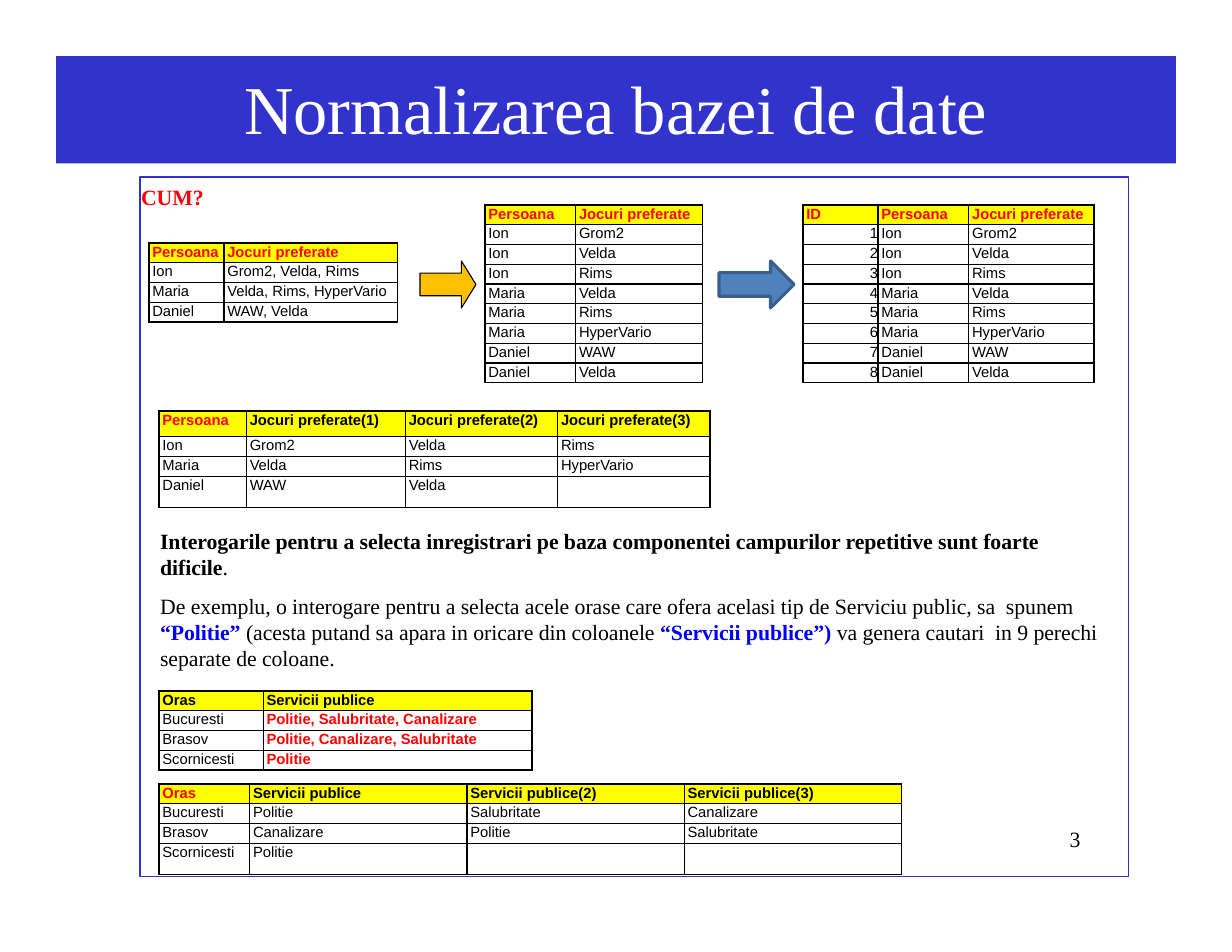
from dataclasses import dataclass

from lxml.etree import SubElement
from pptx import Presentation
from pptx.dml.color import RGBColor
from pptx.enum.shapes import MSO_SHAPE
from pptx.enum.text import MSO_ANCHOR, MSO_AUTO_SIZE, PP_ALIGN
from pptx.oxml.ns import qn
from pptx.util import Inches, Pt


@dataclass(frozen=True)
class Theme:
    """Colours, fonts and type sizes of the deck."""

    banner: str = "3232CC"
    white: str = "FFFFFF"
    black: str = "000000"
    red: str = "FF0000"
    blue: str = "0000FF"
    yellow: str = "FFFF00"
    amber: str = "FFC000"
    steel: str = "4F81BD"
    steel_edge: str = "3A5F8C"
    serif: str = "Times New Roman"
    sans: str = "Arial"
    title: float = 44
    body: float = 14
    cell: float = 9.5


THEME = Theme()
ROW_HEIGHT = Inches(1.59) // 9
FAVOURITES = {
    "Ion": ["Grom2", "Velda", "Rims"],
    "Maria": ["Velda", "Rims", "HyperVario"],
    "Daniel": ["WAW", "Velda"],
}
PAIRS = [[person, game] for person, games in FAVOURITES.items() for game in games]
SERVICES = {
    "Bucuresti": ["Politie", "Salubritate", "Canalizare"],
    "Brasov": ["Politie", "Canalizare", "Salubritate"],
    "Scornicesti": ["Politie"],
}
SERVICE_COLUMNS = {**SERVICES, "Brasov": ["Canalizare", "Politie", "Salubritate"]}


def apply(target, formats):
    """Set each attribute named in a dict of format values."""
    for name, value in formats.items():
        setattr(target, name, value)


def place(box, left, top, width, height):
    """Move and size a shape, in inches."""
    apply(box, {"left": Inches(left), "top": Inches(top),
                "width": Inches(width), "height": Inches(height)})


def add_span(para, text, size, font, color=THEME.black, bold=False, spacing=0):
    """Add one formatted run with letter spacing in points."""
    span = para.add_run()
    span.text = text
    apply(span.font, {"size": Pt(size), "name": font, "bold": bold})
    span.font.color.rgb = RGBColor.from_string(color)
    if spacing:
        span._r.get_or_add_rPr().set("spc", str(round(spacing * 100)))


def frame_text(frame, top_margin, left_margin=0.01):
    """Give a text frame top anchoring and tight margins."""
    apply(frame, {"word_wrap": True, "auto_size": MSO_AUTO_SIZE.NONE,
                  "vertical_anchor": MSO_ANCHOR.TOP,
                  "margin_left": Inches(left_margin), "margin_right": 0,
                  "margin_top": Inches(top_margin), "margin_bottom": 0})


def set_title(page, text):
    """Turn the title placeholder into the coloured banner."""
    box = page.shapes.title
    place(box, 0.5, 0.5, 10, 0.96)
    box.fill.solid()
    box.fill.fore_color.rgb = RGBColor.from_string(THEME.banner)
    frame_text(box.text_frame, 0.09, 0)
    para = box.text_frame.paragraphs[0]
    apply(para, {"alignment": PP_ALIGN.CENTER, "space_before": Pt(6.6)})
    add_span(para, text, THEME.title, THEME.serif, THEME.white, spacing=-0.1)


def add_text(page, bounds, top_margin, paragraphs):
    """Add a serif text box from (space before, spans) paragraphs."""
    box = page.shapes.add_textbox(*map(Inches, bounds))
    frame = box.text_frame
    frame_text(frame, top_margin)
    for index, (space, spans) in enumerate(paragraphs):
        para = frame.add_paragraph() if index else frame.paragraphs[0]
        para.space_before = Pt(space)
        for text, color, bold in spans:
            add_span(para, text, THEME.body, THEME.serif, color, bold, -0.06)


def add_outline(page, kind, bounds, fill, line, weight):
    """Add a preset shape with an optional fill and a line."""
    shape = page.shapes.add_shape(kind, *map(Inches, bounds))
    shape.shadow.inherit = False
    if fill:
        shape.fill.solid()
        shape.fill.fore_color.rgb = RGBColor.from_string(fill)
    else:
        shape.fill.background()
    shape.line.color.rgb = RGBColor.from_string(line)
    shape.line.width = Pt(weight)
    return shape


def add_borders(cell):
    """Draw a thin black line on all four sides of a cell."""
    properties = cell._tc.get_or_add_tcPr()
    for side in ("a:lnL", "a:lnR", "a:lnT", "a:lnB"):
        line = SubElement(properties, qn(side), w=str(Pt(1)))
        fill = SubElement(line, qn("a:solidFill"))
        SubElement(fill, qn("a:srgbClr"), val=THEME.black)


def fill_cell(cell, text, color, bold, fill):
    """Write and format one table cell."""
    add_borders(cell)
    if fill:
        cell.fill.solid()
        cell.fill.fore_color.rgb = RGBColor.from_string(fill)
    else:
        cell.fill.background()
    apply(cell, {"margin_left": Inches(0.03), "margin_right": 0,
                 "margin_top": 0, "margin_bottom": 0})
    para = cell.text_frame.paragraphs[0]
    apply(para, {"line_spacing": Pt(11.1),
                 "alignment": PP_ALIGN.RIGHT if text.isdigit() else PP_ALIGN.LEFT})
    add_span(para, text, THEME.cell, THEME.sans, color, bold)


def add_grid(page, left, top, widths, header, rows, red_headers=0, red_columns=(),
             header_height=ROW_HEIGHT):
    """Add a bordered table whose first header cells may be red."""
    heights = [header_height] + [ROW_HEIGHT] * len(rows)
    table = page.shapes.add_table(len(heights), len(widths), Inches(left), Inches(top),
                                  Inches(sum(widths)), sum(heights)).table
    apply(table, {"first_row": False, "horz_banding": False})
    for column, width in zip(table.columns, widths):
        column.width = Inches(width)
    for row, height in zip(table.rows, heights):
        row.height = height
    for index, text in enumerate(header):
        color = THEME.red if index < red_headers else THEME.black
        fill_cell(table.cell(0, index), text, color, True, THEME.yellow)
    for number, values in enumerate(rows, 1):
        for index in range(len(widths)):
            text = values[index] if index < len(values) else ""
            red = index in red_columns
            fill_cell(table.cell(number, index), text,
                      THEME.red if red else THEME.black, red, None)


def joined(groups):
    """List each name with its values in one cell."""
    return [[name, ", ".join(values)] for name, values in groups.items()]


def spread(groups):
    """List each name with its values in separate cells."""
    return [[name, *values] for name, values in groups.items()]


def add_game_tables(page):
    """Add the steps from repeated values to keyed rows."""
    header = ["Persoana", "Jocuri preferate"]
    add_grid(page, 1.33, 2.17, [0.67, 1.55], header, joined(FAVOURITES), 2)
    add_grid(page, 4.33, 1.83, [0.81, 1.13], header, PAIRS, 2)
    keyed = [[str(number), *pair] for number, pair in enumerate(PAIRS, 1)]
    add_grid(page, 7.17, 1.83, [0.67, 0.81, 1.12], ["ID", *header], keyed, 3)
    numbered = [f"Jocuri preferate({number})" for number in (1, 2, 3)]
    add_grid(page, 1.42, 3.67, [0.78, 1.42, 1.36, 1.36], ["Persoana", *numbered],
             spread(FAVOURITES), 1, header_height=Inches(0.23))
    arrow = add_outline(page, MSO_SHAPE.RIGHT_ARROW, (3.75, 2.33, 0.5, 0.42),
                        THEME.amber, THEME.black, 0.72)
    arrow.adjustments[0], arrow.adjustments[1] = 0.48, 0.31
    add_outline(page, MSO_SHAPE.RIGHT_ARROW, (6.42, 2.33, 0.67, 0.42),
                THEME.steel, THEME.steel_edge, 2)


def add_service_tables(page):
    """Add the two layouts of public services by city."""
    header = ["Oras", "Servicii publice"]
    add_grid(page, 1.42, 6.17, [0.93, 2.4], header, joined(SERVICES), red_columns=(1,))
    numbered = [f"Servicii publice({number})" for number in (2, 3)]
    add_grid(page, 1.42, 7, [0.81] + [1.94] * 3, header + numbered,
             spread(SERVICE_COLUMNS), 1)


def main():
    """Build and save the slide."""
    deck = Presentation()
    apply(deck, {"slide_width": Inches(11), "slide_height": Inches(8.5)})
    page = deck.slides.add_slide(deck.slide_layouts[5])
    black, blue = THEME.black, THEME.blue
    set_title(page, "Normalizarea bazei de date")
    add_outline(page, MSO_SHAPE.RECTANGLE, (1.25, 1.58, 8.83, 6.25),
                None, THEME.banner, 0.72)
    add_text(page, (9.54, 7.36, 0.13, 0.26), 0.01, [(1, [("3", black, False)])])
    add_text(page, (1.25, 1.58, 0.83, 0.29), 0.06, [(4.2, [("CUM?", THEME.red, True)])])
    add_text(page, (1.42, 4.58, 8.5, 1.42), 0.13, [
        (9.4, [("Interogarile pentru a selecta inregistrari pe baza componentei "
                "campurilor repetitive sunt foarte dificile", black, True),
               (".", black, False)]),
        (8.4, [("De exemplu, o interogare pentru a selecta acele orase care ofera "
                "acelasi tip de Serviciu public, sa  spunem ", black, False),
               ("“Politie” ", blue, True),
               ("(acesta putand sa apara in oricare din coloanele ", black, False),
               ("“Servicii publice”) ", blue, True),
               ("va genera cautari  in 9 perechi separate de coloane.", black, False)]),
    ])
    add_game_tables(page)
    add_service_tables(page)
    deck.save("out.pptx")


if __name__ == "__main__":
    main()
